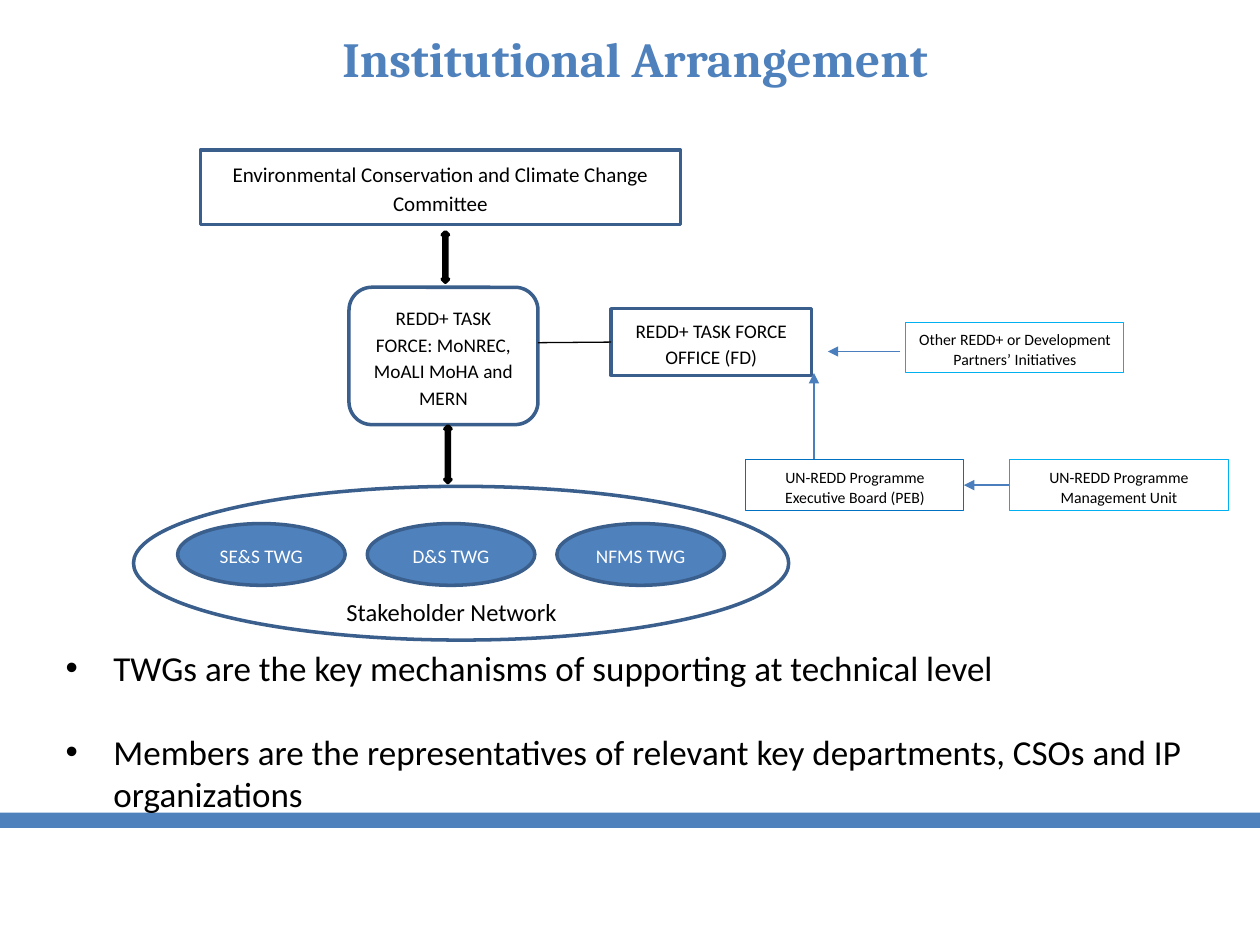
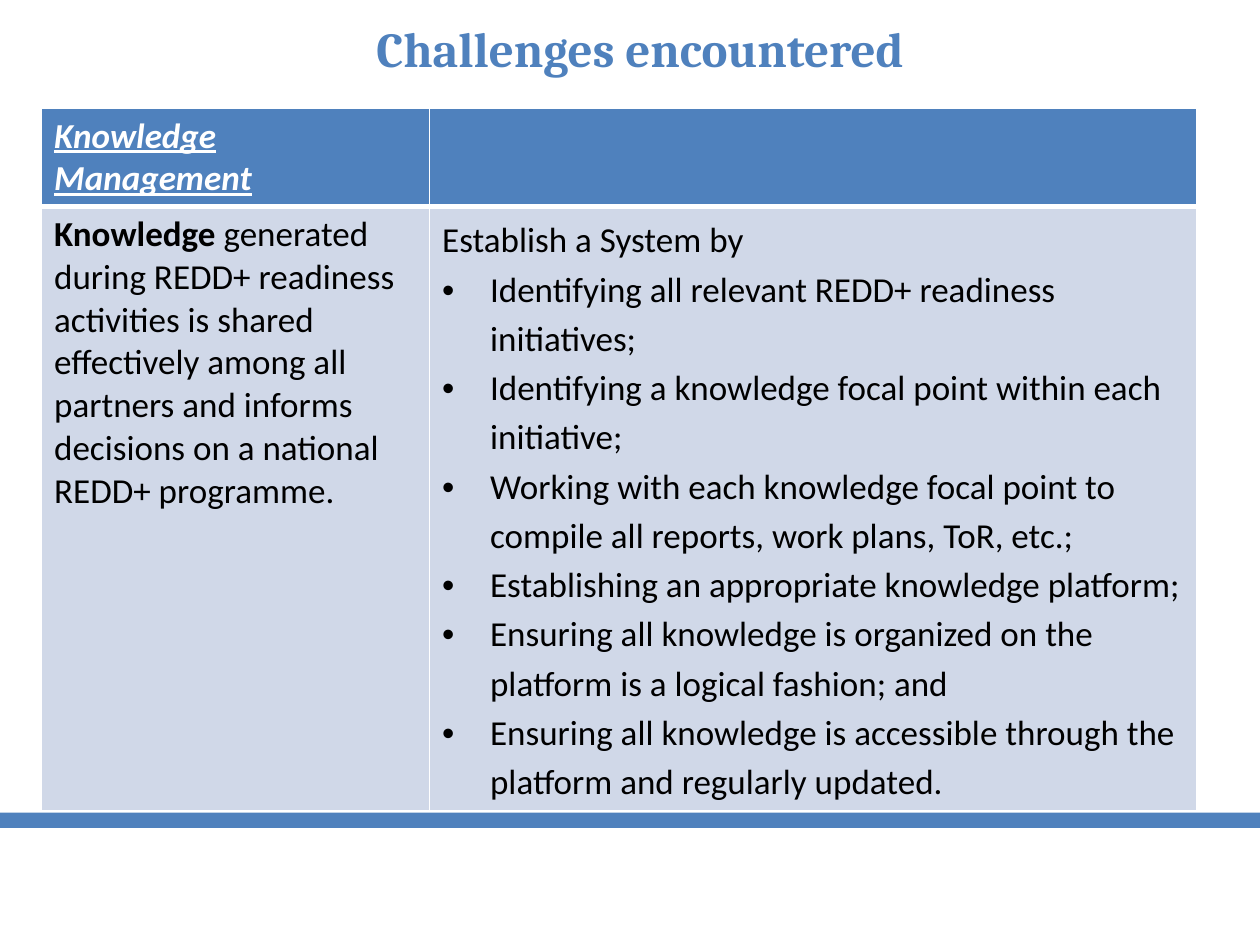
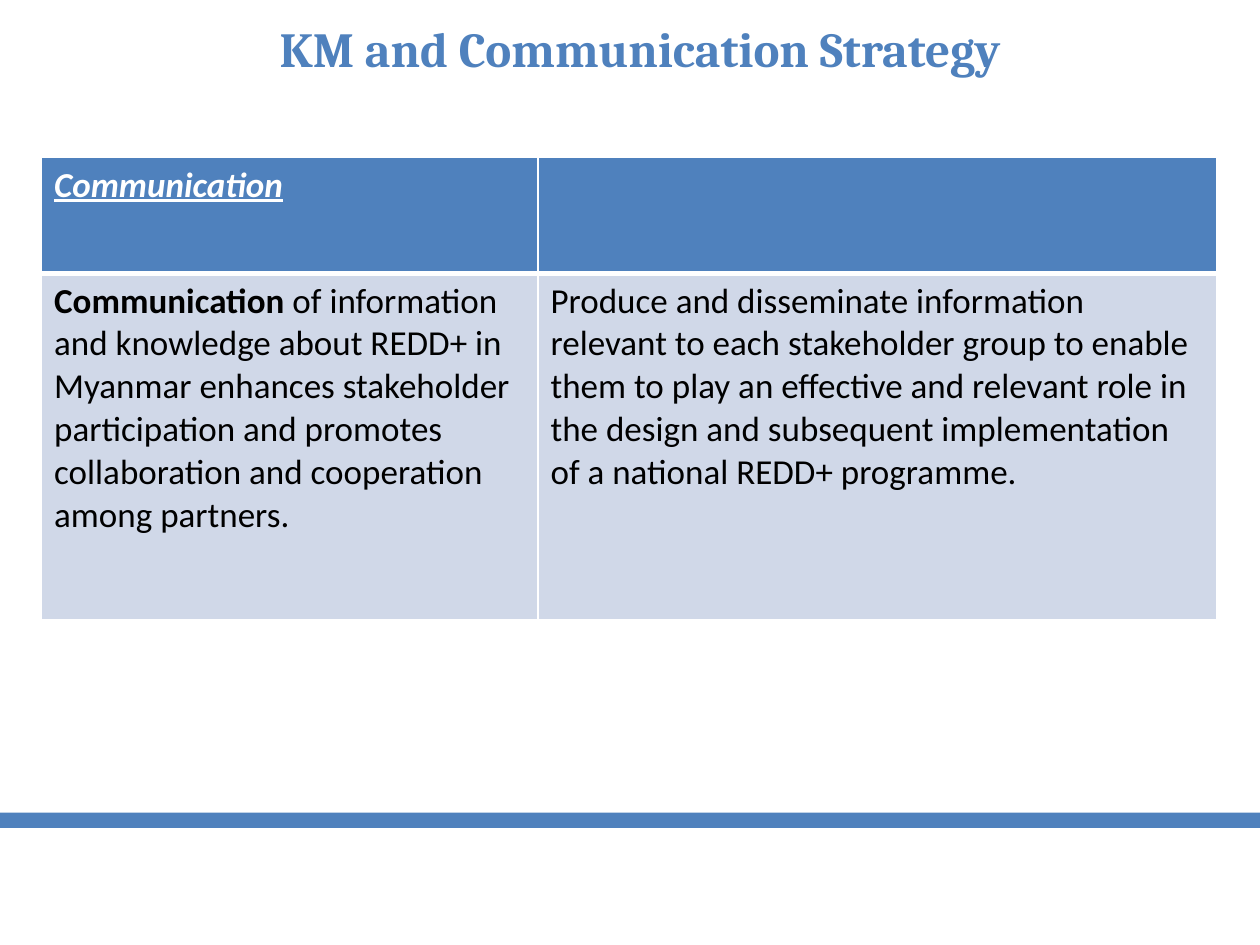
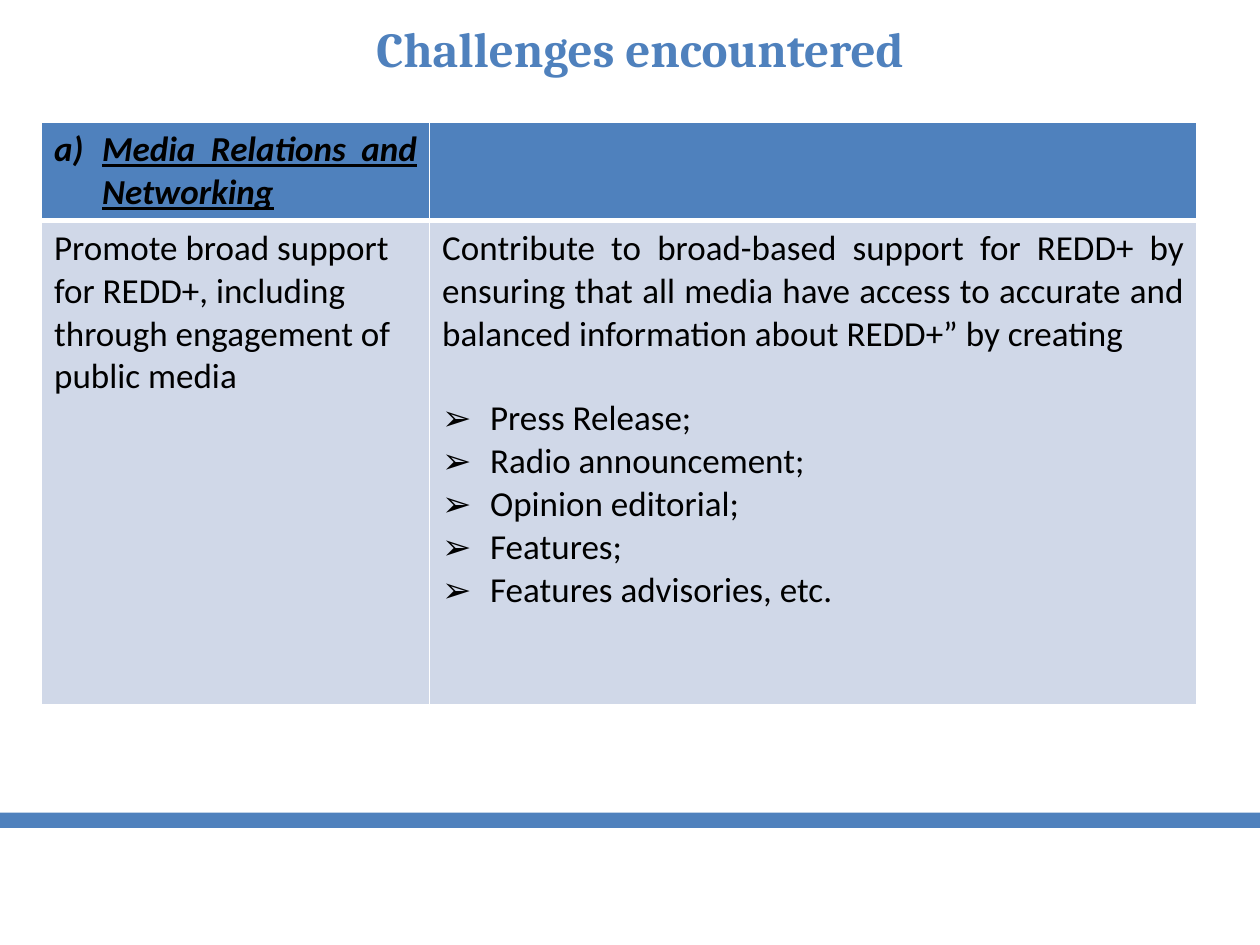
from dataclasses import dataclass
from lxml.etree import SubElement
from pptx import Presentation
from pptx.dml.color import RGBColor
from pptx.enum.shapes import MSO_CONNECTOR, MSO_SHAPE
from pptx.enum.text import MSO_ANCHOR, MSO_AUTO_SIZE, PP_ALIGN
from pptx.oxml import parse_xml
from pptx.oxml.ns import nsdecls, qn
from pptx.util import Inches, Pt

# Shared look
HEX = {"blue": "4F81BD", "edge": "3A5F8C", "arrow": "4B7EBC", "sky": "00B0F0",
       "deep": "0070C0", "pale": "D0D8E8", "black": "000000", "white": "FFFFFF"}
BODY, HEAD = "Calibri", "Cambria"
UNIT = Inches(0.1)  # the slide is a grid of 100 columns by 75 rows
COLS, ROWS = 100, 75
INDENT = 3.8
TOP = (3.3, -0.8, 95, 9.2)  # title place on the table slides
LEFT, MID, JUST = PP_ALIGN.LEFT, PP_ALIGN.CENTER, PP_ALIGN.JUSTIFY


@dataclass
class Par:
    """One paragraph: runs are (text, style) pairs, style letters b, i, u."""
    runs: list
    align: int = LEFT
    mark: str = ""
    margin: float = INDENT
    line: float = 1
    before: float = 0


def plain(text, **look):
    return Par([(text, "")], **look)


def rgb(name):
    return RGBColor.from_string(HEX[name])


def grid(*cells):
    return [round(c * UNIT) for c in cells]


# Text
def bullet(par, mark, margin):
    props = par._p.get_or_add_pPr()
    props.set("marL", str(round(margin * UNIT)))
    props.set("indent", str(round(-INDENT * UNIT)))
    if mark == "a)":
        SubElement(props, qn("a:buAutoNum"), type="alphaLcParenR")
    else:
        SubElement(props, qn("a:buFont"), typeface="Arial")
        SubElement(props, qn("a:buChar"), char=mark)


def write(frame, pars, size, color="black", face=BODY):
    frame.word_wrap = True
    for n, item in enumerate(pars):
        par = frame.add_paragraph() if n else frame.paragraphs[0]
        if item.mark:
            bullet(par, item.mark, item.margin)
        par.alignment = item.align
        par.line_spacing = item.line
        par.space_before = Pt(item.before)
        for text, style in item.runs:
            run = par.add_run()
            run.text = text
            font = run.font
            font.name, font.size = face, Pt(size)
            font.color.rgb = rgb(color)
            font.bold, font.italic = "b" in style, "i" in style
            font.underline = "u" in style


def place(shape, spot):
    shape.left, shape.top, shape.width, shape.height = grid(*spot)


def title(slide, text, spot=TOP):
    box = slide.shapes.title
    place(box, spot)
    box.text_frame.vertical_anchor = MSO_ANCHOR.MIDDLE
    write(box.text_frame, [Par([(text, "b")], MID)], 28, "blue", HEAD)


# Shapes and lines
def shape(slide, kind, spot, text="", size=11, edge="edge", width=2, fill=None,
          color="black", line=1.15, anchor=MSO_ANCHOR.MIDDLE):
    item = slide.shapes.add_shape(kind, *grid(*spot))
    item.shadow.inherit = False
    if fill:
        item.fill.solid()
        item.fill.fore_color.rgb = rgb(fill)
    else:
        item.fill.background()
    if edge:
        item.line.color.rgb = rgb(edge)
        item.line.width = Pt(width)
    else:
        item.line.fill.background()
    if text:
        item.text_frame.vertical_anchor = anchor
        write(item.text_frame, [plain(text, align=MID, line=line)], size, color)
    return item


def note(slide, spot, text, edge):
    return shape(slide, MSO_SHAPE.RECTANGLE, spot, text, 9, edge, 0.5,
                 line=1.07, anchor=MSO_ANCHOR.TOP)


def link(slide, ends, color="arrow", head=True, start=None, stop=None):
    item = slide.shapes.add_connector(MSO_CONNECTOR.STRAIGHT, *grid(*ends))
    if start:
        item.begin_connect(*start)
    if stop:
        item.end_connect(*stop)
    item.line.color.rgb = rgb(color)
    item.line.width = Pt(0.75)
    if head:
        SubElement(item.line._get_or_add_ln(), qn("a:tailEnd"), type="triangle")
    SubElement(item.element.spPr, qn("a:effectLst"))


def band(deck, slide):
    """Draw the footer band once and hand it to the master."""
    bar = shape(slide, MSO_SHAPE.RECTANGLE, (0, 64.5, COLS, 1.2),
                edge=None, fill="blue").element
    bar.nvSpPr.cNvPr.set("id", "99")
    deck.slide_master.element.cSld.spTree.insert(2, bar)


# Tables
def border(cell, top, base):
    props = cell._tc.get_or_add_tcPr()
    for n, (side, width) in enumerate(zip("LRTB", (1, 1, top, base))):
        props.insert(n, parse_xml(
            f'<a:ln{side} {nsdecls("a")} w="{Pt(width)}"><a:solidFill>'
            f'<a:srgbClr val="{HEX["white"]}"/></a:solidFill></a:ln{side}>'))


def table(slide, top, cols, rows, head, left, right, ink="white"):
    spot = (3.3, top, sum(cols), sum(rows))
    tab = slide.shapes.add_table(2, 2, *grid(*spot)).table
    for col, size in zip(tab.columns, grid(*cols)):
        col.width = size
    for row, size in zip(tab.rows, grid(*rows)):
        row.height = size
    looks = (("blue", ink, 1, 3), ("pale", "black", 3, 1))
    texts = (([head], []), (left, right))
    for r, (fill, color, over, base) in enumerate(looks):
        for c, pars in enumerate(texts[r]):
            cell = tab.cell(r, c)
            cell.fill.solid()
            cell.fill.fore_color.rgb = rgb(fill)
            border(cell, over, base)
            write(cell.text_frame, pars, 20, color)


# Slides
def chart(slide):
    title(slide, "Institutional Arrangement", (2.9, 0, 95, 9.2))
    body = slide.placeholders[1]
    place(body, (-0.8, 50.8, 98.8, 14.5))
    body.text_frame.auto_size = MSO_AUTO_SIZE.NONE
    write(body.text_frame, [
        plain("TWGs are the key mechanisms of supporting at technical level",
              mark="•", margin=8.8),
        plain("Members are the representatives of relevant key departments, "
              "CSOs and IP organizations", mark="•", margin=8.8, before=24)], 20)

    # Chain of command
    rect, oval = MSO_SHAPE.RECTANGLE, MSO_SHAPE.OVAL
    shape(slide, MSO_SHAPE.ROUNDED_RECTANGLE, (27.7, 22.8, 15, 10.9),
          "REDD+ TASK FORCE: MoNREC, MoALI MoHA and MERN")
    office = shape(slide, rect, (48.5, 24.5, 15.9, 5.3),
                   "REDD+ TASK FORCE OFFICE (FD)")
    link(slide, (42.7, 27.2, 48.5, 27.2), "black", False, stop=(office, 1))
    shape(slide, rect, (15.9, 11.9, 38.1, 5.9),
          "Environmental Conservation and Climate Change Committee", 12)
    for spot in ((35.1, 18.4, 0.5, 4), (35.3, 33.8, 0.5, 4.5)):
        shape(slide, MSO_SHAPE.UP_DOWN_ARROW, spot, edge="black", fill="black")

    # Stakeholder network
    shape(slide, oval, (10.6, 38.6, 52, 12.2))
    for n, name in enumerate(("SE&S", "D&S", "NFMS")):
        shape(slide, oval, (14.1 + 15.05 * n, 41.55, 13.3, 4.9),
              f"{name} TWG", fill="blue", color="white")
    label = slide.shapes.add_textbox(*grid(24.3, 46.7, 23.1, 4))
    write(label.text_frame,
          [plain("Stakeholder Network", align=MID, line=1.07)], 14)

    # Partners
    note(slide, (71.9, 25.6, 17.3, 4),
         "Other REDD+ or Development Partners’ Initiatives", "sky")
    board = note(slide, (59.2, 36.5, 17.3, 4),
                 "UN-REDD Programme Executive Board (PEB)", "deep")
    unit = note(slide, (80.1, 36.5, 17.4, 4),
                "UN-REDD Programme Management Unit", "sky")
    link(slide, (80.1, 38.5, 76.5, 38.5), start=(unit, 1), stop=(board, 3))
    link(slide, (64.6, 36.4, 64.6, 29.6))
    link(slide, (71.4, 27.9, 65.7, 27.9))


def knowledge(slide):
    title(slide, "Challenges encountered")
    steps = ("Identifying all relevant REDD+ readiness initiatives;",
             "Identifying a knowledge focal point within each initiative;",
             "Working with each knowledge focal point to compile all reports, "
             "work plans, ToR, etc.;",
             "Establishing an appropriate knowledge platform;",
             "Ensuring all knowledge is organized on the platform is a logical "
             "fashion; and",
             "Ensuring all knowledge is accessible through the platform and "
             "regularly updated.")
    table(slide, 8.6, (30.8, 60.9), (7.8, 47.8),
          Par([("Knowledge Management", "biu")]),
          [Par([("Knowledge", "b"),
                (" generated during REDD+ readiness activities is shared "
                 "effectively among all partners and informs decisions on a "
                 "national REDD+ programme.", "")])],
          [plain("Establish a System by", line=1.15)]
          + [plain(step, mark="•", line=1.15) for step in steps])


def strategy(slide):
    title(slide, "KM and Communication Strategy")
    table(slide, 12.5, (39.4, 53.9), (9.2, 27.5),
          Par([("Communication", "biu")]),
          [Par([("Communication", "b"),
                (" of information and knowledge about REDD+ in Myanmar enhances "
                 "stakeholder participation and promotes collaboration and "
                 "cooperation among partners.", "")])],
          [plain("Produce and disseminate information relevant to each "
                 "stakeholder group to enable them to play an effective and "
                 "relevant role in the design and subsequent implementation of "
                 "a national REDD+ programme.")])


def media(slide):
    title(slide, "Challenges encountered")
    items = ("Press Release;", "Radio announcement;", "Opinion editorial;",
             "Features;", "Features advisories, etc.")
    table(slide, 9.7, (30.8, 60.9), (7.8, 38.4),
          Par([("Media Relations and Networking", "biu")], JUST, "a)"),
          [plain("Promote broad support for REDD+, including through engagement "
                 "of public media")],
          [plain("Contribute to broad-based support for REDD+ by ensuring that "
                 "all media have access to accurate and balanced information "
                 "about REDD+” by creating", align=JUST)]
          + [plain(item, align=JUST, mark="➢", before=0 if n else 24)
             for n, item in enumerate(items)], "black")


def main():
    deck = Presentation()
    deck.slide_width, deck.slide_height = grid(COLS, ROWS)
    for build, kind in ((chart, 1), (knowledge, 5), (strategy, 5), (media, 5)):
        build(deck.slides.add_slide(deck.slide_layouts[kind]))
    band(deck, deck.slides[0])
    deck.save("out.pptx")


if __name__ == "__main__":
    main()
